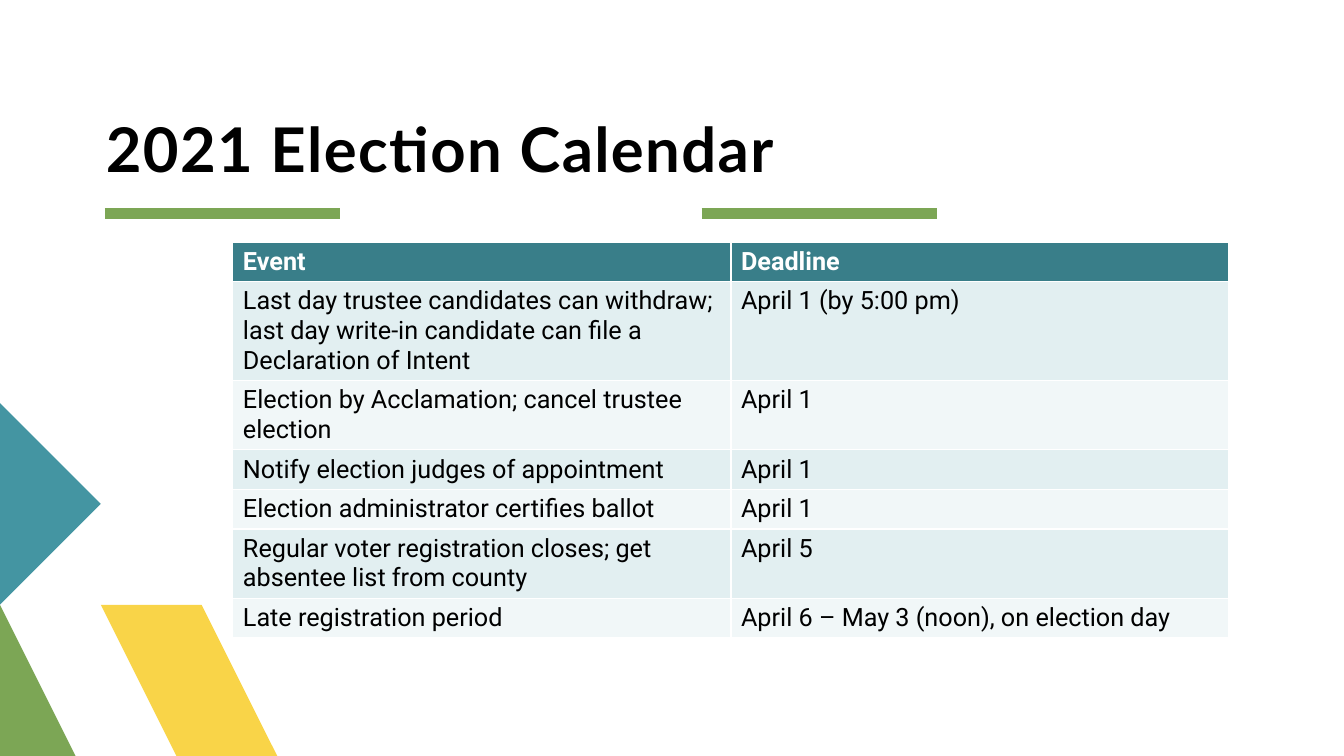
from pptx import Presentation
from pptx.dml.color import RGBColor
from pptx.enum.shapes import MSO_CONNECTOR
from pptx.enum.text import MSO_ANCHOR, MSO_AUTO_SIZE, PP_ALIGN
from pptx.oxml.ns import qn
from pptx.util import Inches, Pt
from lxml import etree

STRAIGHT = MSO_CONNECTOR.STRAIGHT
BOTTOM = MSO_ANCHOR.BOTTOM
LEFT = PP_ALIGN.LEFT
NO_AUTOFIT = MSO_AUTO_SIZE.NONE

COLORS = {
    "black": "000000", "white": "FFFFFF", "yellow": "F9D448", "green": "7CA655",
    "teal": "4495A2", "header": "397E89", "odd": "E2EFF1", "even": "F1F7F8",
}
TITLE = "2021 Election Calendar"
# Event, deadline, number of text lines
CALENDAR = [
    ("Event", "Deadline", 1),
    ("Last day trustee candidates can withdraw; last day write-in candidate "
     "can file a Declaration of Intent", "April 1 (by 5:00 pm)", 3),
    ("Election by Acclamation; cancel trustee election", "April 1", 2),
    ("Notify election judges of appointment", "April 1", 1),
    ("Election administrator certifies ballot", "April 1", 1),
    ("Regular voter registration closes; get absentee list from county", "April 5", 2),
    ("Late registration period", "April 6 – May 3 (noon), on election day", 1),
]
CORNER_SHAPES = [
    ("yellow", [(3.24, 7.5), (2.15, 7.5), (1.06, 6.41), (1.61, 5.87)]),
    ("green", [(1.06, 7.5), (0, 7.5), (0, 6.44)]),
    ("teal", [(0, 4.27), (1.06, 5.33), (0, 6.39)]),
]
RULE_STARTS = [1.04, 6.96]
RULE_LENGTH, RULE_TOP = 2.33, 2.12
TABLE_LEFT, TABLE_TOP, COLUMN_WIDTH = 2.31, 2.4, 4.94
CELL_PADDING, LINE_HEIGHT = 0.1, 0.29


def color(name):
    return RGBColor.from_string(COLORS[name])


def format_run(run, font_name, size, color_name, bold):
    run.font.name = font_name
    run.font.size = Pt(size)
    run.font.bold = bold
    run.font.color.rgb = color(color_name)


def add_corner_shape(slide, color_name, points):
    builder = slide.shapes.build_freeform(*points[0], scale=Inches(1))
    builder.add_line_segments(points[1:], close=True)
    shape = builder.convert_to_shape()
    shape.shadow.inherit = False
    shape.fill.solid()
    shape.fill.fore_color.rgb = color(color_name)
    shape.line.fill.background()


def add_rule(slide, left):
    top = Inches(RULE_TOP)
    rule = slide.shapes.add_connector(
        STRAIGHT, Inches(left), top, Inches(left + RULE_LENGTH), top)
    rule.line.color.rgb = color("green")
    rule.line.width = Pt(8)
    etree.SubElement(rule._element.spPr, qn("a:effectLst"))


def add_title(slide):
    title = slide.shapes.title
    title.left, title.top = Inches(1.05), Inches(0.96)
    title.width, title.height = Inches(8.67), Inches(0.88)
    frame = title.text_frame
    frame.text = TITLE
    frame.auto_size = NO_AUTOFIT
    frame.word_wrap = True
    frame.vertical_anchor = BOTTOM
    frame.margin_left = frame.margin_top = frame.margin_right = frame.margin_bottom = 0
    paragraph = frame.paragraphs[0]
    paragraph.alignment = LEFT
    paragraph.line_spacing = 0.9
    run = paragraph.runs[0]
    format_run(run, "Lato", 44, "black", True)
    run.font._element.set("spc", "100")


def add_calendar(slide):
    heights = [CELL_PADDING + LINE_HEIGHT * lines for _, _, lines in CALENDAR]
    table = slide.shapes.add_table(
        len(CALENDAR), 2, Inches(TABLE_LEFT), Inches(TABLE_TOP),
        Inches(2 * COLUMN_WIDTH), Inches(sum(heights))).table
    for column in table.columns:
        column.width = Inches(COLUMN_WIDTH)
    for index, (event, deadline, _) in enumerate(CALENDAR):
        table.rows[index].height = Inches(heights[index])
        is_header = index == 0
        fill_name = "header" if is_header else ("even", "odd")[index % 2]
        for cell, text in zip(table.rows[index].cells, (event, deadline)):
            cell.text = text
            cell.fill.solid()
            cell.fill.fore_color.rgb = color(fill_name)
            format_run(cell.text_frame.paragraphs[0].runs[0], "Roboto", 18,
                       "white" if is_header else "black", is_header)


def main():
    presentation = Presentation()
    presentation.slide_width = Inches(13.33)
    presentation.slide_height = Inches(7.5)
    slide = presentation.slides.add_slide(presentation.slide_layouts[5])
    for color_name, points in CORNER_SHAPES:
        add_corner_shape(slide, color_name, points)
    for left in RULE_STARTS:
        add_rule(slide, left)
    add_title(slide)
    add_calendar(slide)
    presentation.save("out.pptx")


if __name__ == "__main__":
    main()
